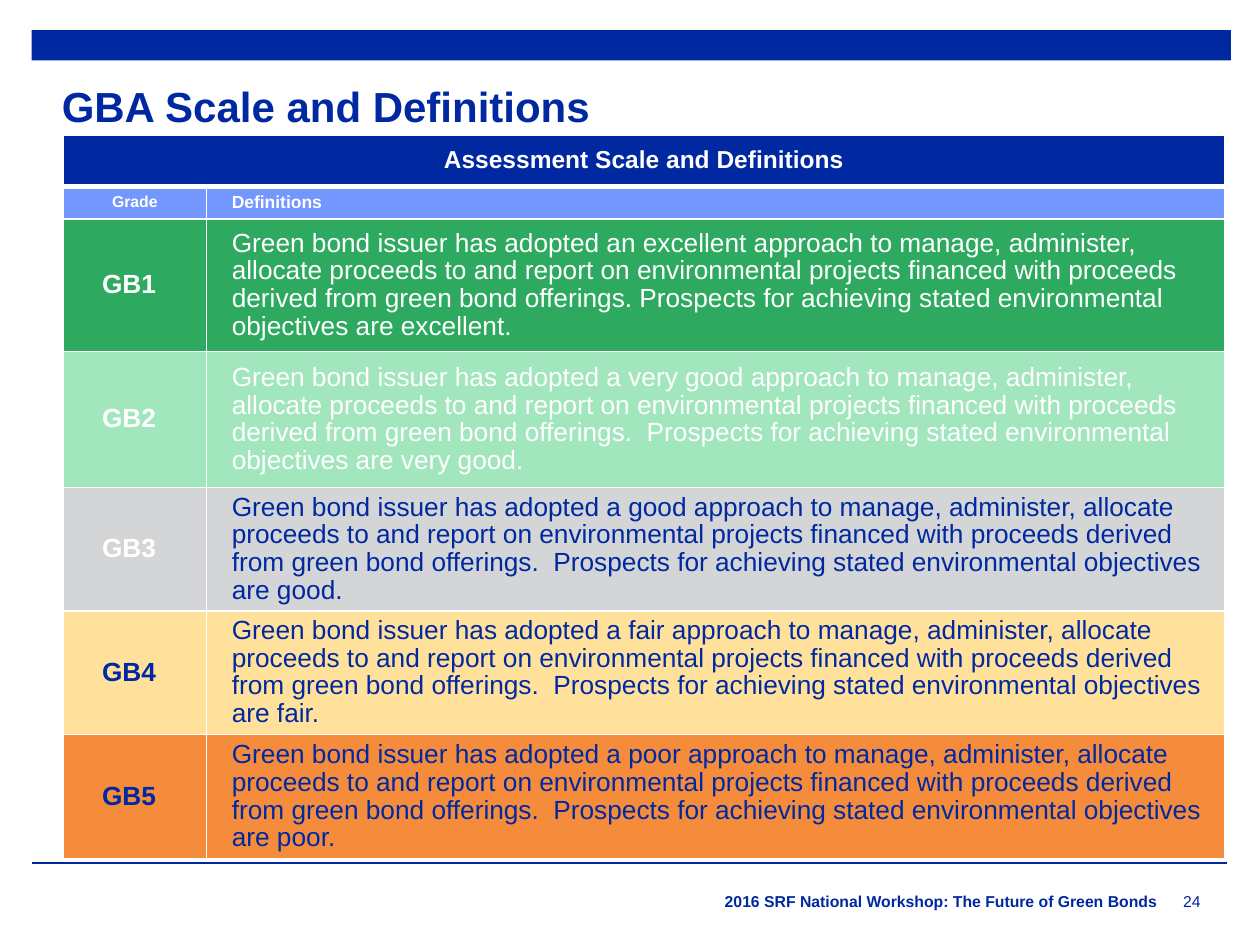
import pptx
import pptx.util
import pptx.dml.color
import pptx.enum.shapes
import pptx.enum.text
import pptx.oxml.ns
from dataclasses import dataclass
from lxml import etree

Inches = pptx.util.Inches
Pt = pptx.util.Pt
Align = pptx.enum.text.PP_ALIGN
Anchor = pptx.enum.text.MSO_ANCHOR
qn = pptx.oxml.ns.qn

HUES = {
    "navy": "0028A0", "white": "FFFFFF", "blue": "7396FF", "green": "2DAA5F",
    "mint": "A2E6BD", "grey": "D3D5D7", "sand": "FFE19C", "orange": "F58C3C",
}


@dataclass
class Grade:
    code: str
    article: str
    level: str
    fill: str
    code_hue: str
    text_hue: str
    gap: str = "  "

    def text(self) -> str:
        return (f"Green bond issuer has adopted {self.article} {self.level} approach to manage, "
                "administer, allocate proceeds to and report on environmental projects financed "
                f"with proceeds derived from green bond offerings.{self.gap}Prospects for "
                f"achieving stated environmental objectives are {self.level}.")


GRADES = [
    Grade("GB1", "an", "excellent", "green", "white", "white", " "),
    Grade("GB2", "a", "very good", "mint", "white", "white"),
    Grade("GB3", "a", "good", "grey", "white", "navy"),
    Grade("GB4", "a", "fair", "sand", "navy", "navy"),
    Grade("GB5", "a", "poor", "orange", "navy", "navy"),
]
COLS = [1.14, 8.08]
ROWS = [0.41, 0.26, 1.05, 1.08, 0.98, 0.98, 0.99]


def rgb(hue: str):
    return pptx.dml.color.RGBColor.from_string(HUES[hue])


def write(frame, text: str, *, size: float, hue: str = "navy", bold: bool = False,
          align=Align.LEFT, lines: float = 1.0, after: float = 0,
          left: float = 0, first: float = 0) -> None:
    """Put one formatted paragraph in a text frame."""
    frame.word_wrap = True
    para = frame.paragraphs[0]
    para.alignment = align
    para.line_spacing = lines
    para.space_before = Pt(0)
    para.space_after = Pt(after)
    props = para._p.get_or_add_pPr()
    props.set("marL", str(Inches(left)))
    props.set("indent", str(Inches(first)))
    run = para.add_run()
    run.text = text
    run.font.name = "Arial"
    run.font.size = Pt(size)
    run.font.bold = bold
    run.font.color.rgb = rgb(hue)


def clear(frame) -> None:
    frame.margin_left = frame.margin_right = 0
    frame.margin_top = frame.margin_bottom = 0
    frame.vertical_anchor = Anchor.TOP


def label(slide, box: tuple, text: str, **form) -> None:
    frame = slide.shapes.add_textbox(*map(Inches, box)).text_frame
    clear(frame)
    write(frame, text, **form)


def edge(cell, top: float = 1, base: float = 1) -> None:
    """Give a cell white borders; they come before its fill."""
    props = cell._tc.get_or_add_tcPr()
    sides = {"lnL": 1, "lnR": 1, "lnT": top, "lnB": base}
    for spot, (side, width) in enumerate(sides.items()):
        line = etree.Element(qn(f"a:{side}"), w=str(Pt(width)))
        fill = etree.SubElement(line, qn("a:solidFill"))
        etree.SubElement(fill, qn("a:srgbClr"), val=HUES["white"])
        props.insert(spot, line)


def fill_cell(cell, text: str, fill: str, *, top: float = 1, base: float = 1, **form) -> None:
    cell.margin_left = cell.margin_right = Inches(0.06)
    cell.margin_top = cell.margin_bottom = 0
    cell.vertical_anchor = Anchor.MIDDLE
    cell.fill.solid()
    cell.fill.fore_color.rgb = rgb(fill)
    edge(cell, top, base)
    write(cell.text_frame, text, **form)


def add_frame(slide) -> None:
    """Top bar, bottom rule and footer."""
    bar = slide.shapes.add_shape(pptx.enum.shapes.MSO_SHAPE.RECTANGLE,
                                 *map(Inches, (0.25, 0.24, 9.52, 0.24)))
    bar.shadow.inherit = False
    bar.fill.solid()
    bar.fill.fore_color.rgb = rgb("navy")
    bar.line.fill.background()
    rule = slide.shapes.add_connector(pptx.enum.shapes.MSO_CONNECTOR.STRAIGHT,
                                      *map(Inches, (0.25, 6.85, 9.74, 6.85)))
    rule.line.color.rgb = rgb("navy")
    rule.line.width = Pt(1)
    etree.SubElement(rule._element.spPr, qn("a:effectLst"))
    label(slide, (4.79, 7.08, 4.39, 0.17),
          "2016 SRF National Workshop: The Future of Green Bonds",
          size=9, bold=True, align=Align.RIGHT)
    label(slide, (9.39, 7.08, 0.47, 0.17), "24", size=9)


def add_title(slide, text: str) -> None:
    title = slide.shapes.title
    title.left, title.top, title.width, title.height = map(Inches, (0.49, 0.7, 9, 0.34))
    clear(title.text_frame)
    write(title.text_frame, text, size=24, bold=True, lines=0.85)


def add_scale(slide) -> None:
    table = slide.shapes.add_table(len(ROWS), len(COLS), *map(
        Inches, (0.5, 1.07, sum(COLS), sum(ROWS)))).table
    table.first_row = table.horz_banding = False
    for col, width in zip(table.columns, COLS):
        col.width = Inches(width)
    for row, height in zip(table.rows, ROWS):
        row.height = Inches(height)

    # Heading rows
    head = table.cell(0, 0)
    head.merge(table.cell(0, 1))
    fill_cell(head, "Assessment Scale and Definitions", "navy", base=3, size=14, hue="white",
              bold=True, align=Align.CENTER, lines=0.95, after=2, left=0.5, first=-0.5)
    edge(table.cell(0, 1), base=3)
    sub = dict(top=3, hue="white", bold=True, lines=0.9, after=2)
    fill_cell(table.cell(1, 0), "Grade", "blue", size=9, align=Align.CENTER,
              left=0.5, first=-0.57, **sub)
    fill_cell(table.cell(1, 1), "Definitions", "blue", size=10, left=0.14, **sub)

    # One row per grade
    body = dict(size=15, lines=0.95, after=2.5)
    for row, grade in enumerate(GRADES, 2):
        fill_cell(table.cell(row, 0), grade.code, grade.fill, hue=grade.code_hue,
                  bold=True, left=0.5, first=-0.25, **body)
        fill_cell(table.cell(row, 1), grade.text(), grade.fill, hue=grade.text_hue,
                  left=0.14, **body)


def main() -> None:
    deck = pptx.Presentation()
    deck.slide_width, deck.slide_height = Inches(10), Inches(7.5)
    slide = deck.slides.add_slide(deck.slide_layouts[5])
    add_frame(slide)
    add_title(slide, "GBA Scale and Definitions")
    add_scale(slide)
    deck.save("out.pptx")


if __name__ == "__main__":
    main()
